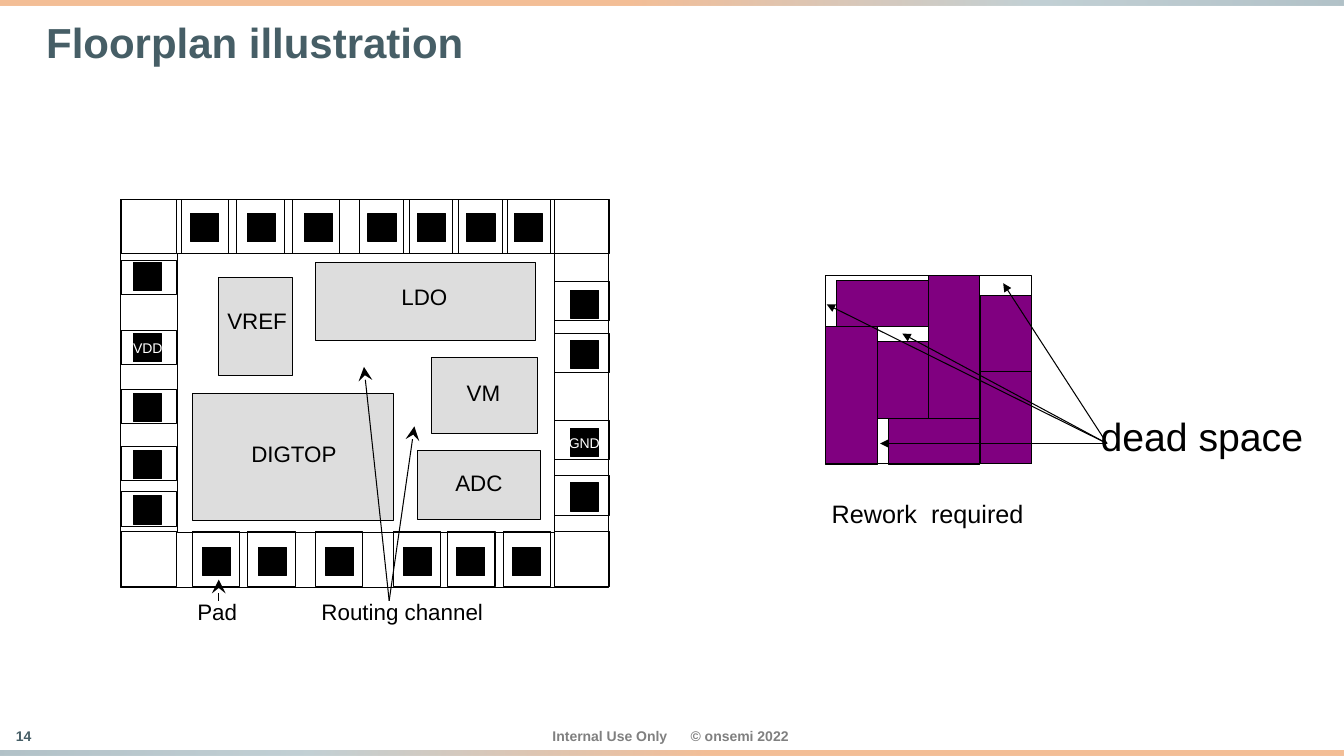
from dataclasses import dataclass

from lxml.etree import SubElement
from pptx import Presentation
from pptx.dml.color import RGBColor
from pptx.enum.shapes import MSO_CONNECTOR, MSO_SHAPE
from pptx.enum.text import MSO_ANCHOR, PP_ALIGN
from pptx.oxml import parse_xml
from pptx.oxml.ns import nsdecls, qn
from pptx.util import Inches, Pt


@dataclass(frozen=True)
class Theme:
    """Colours, type sizes and line width of the slide."""
    font: str = "Arial"
    black: str = "000000"
    white: str = "FFFFFF"
    slate: str = "465E66"
    footer_grey: str = "808080"
    macro_grey: str = "DDDDDD"
    purple: str = "800080"
    band_stops: tuple = ((47, "E97D2E"), (77, "87A3AC"), (100, "648692"))
    title: int = 30
    callout: int = 28
    caption: int = 18
    label: int = 16
    small: int = 10
    line: float = 0.75


class FloorplanSlide:
    """Draws the elements of the floorplan on one slide."""

    def __init__(self, slide, theme):
        self.shapes = slide.shapes
        self.theme = theme

    def rect(self, left, top, width, height, fill=None):
        """Add an outlined rectangle, filled when a colour is given."""
        cell = self.shapes.add_shape(MSO_SHAPE.RECTANGLE, Inches(left), Inches(top),
                                     Inches(width), Inches(height))
        cell.shadow.inherit = False
        if fill:
            cell.fill.solid()
            cell.fill.fore_color.rgb = RGBColor.from_string(fill)
        else:
            cell.fill.background()
        cell.line.color.rgb = RGBColor.from_string(self.theme.black)
        cell.line.width = Pt(self.theme.line)
        return cell

    def band(self, top, angle):
        """Add a full-width gradient strip running at the given angle."""
        strip = self.rect(0, top, 13.33, 0.05)
        strip.line.fill.background()
        stops = "".join(
            f'<a:gs pos="{position * 1000}"><a:srgbClr val="{colour}">'
            f'<a:alpha val="50000"/></a:srgbClr></a:gs>'
            for position, colour in self.theme.band_stops)
        gradient = parse_xml(
            f'<a:gradFill {nsdecls("a")} rotWithShape="1"><a:gsLst>{stops}</a:gsLst>'
            f'<a:lin ang="{angle * 60000}" scaled="0"/></a:gradFill>')
        properties = strip.element.spPr
        properties.replace(properties.find(qn("a:noFill")), gradient)

    def text(self, words, left, top, width, height, size, colour=None, bold=False,
             align=PP_ALIGN.CENTER, inset=True, wrap=True, tab=None, spacing=None):
        """Add a one-paragraph text box."""
        box = self.shapes.add_textbox(Inches(left), Inches(top), Inches(width), Inches(height))
        frame = box.text_frame
        frame.word_wrap = wrap
        frame.vertical_anchor = MSO_ANCHOR.MIDDLE
        if not inset:
            frame.margin_left = frame.margin_right = frame.margin_top = frame.margin_bottom = 0
        paragraph = frame.paragraphs[0]
        paragraph.text = words
        paragraph.alignment = align
        if spacing:
            paragraph.line_spacing = spacing
        if tab:
            tabs = SubElement(paragraph._p.get_or_add_pPr(), qn("a:tabLst"))
            SubElement(tabs, qn("a:tab"), pos=str(Inches(tab)), algn="l")
        paragraph.font.name = self.theme.font
        paragraph.font.size = Pt(size)
        paragraph.font.bold = bold
        paragraph.font.color.rgb = RGBColor.from_string(colour or self.theme.black)

    def arrow(self, start, tip, head="triangle", size="med"):
        """Add a straight arrow from start to tip."""
        pointer = self.shapes.add_connector(
            MSO_CONNECTOR.STRAIGHT, *(Inches(length) for length in (*start, *tip)))
        pointer.line.color.rgb = RGBColor.from_string(self.theme.black)
        pointer.line.width = Pt(self.theme.line)
        SubElement(pointer.line._get_or_add_ln(), qn("a:tailEnd"), type=head, w=size, len=size)
        SubElement(pointer.element.spPr, qn("a:effectLst"))

    def pad(self, left, top):
        """Add a black bond pad."""
        self.rect(left, top, 0.28, 0.28, self.theme.black)


def draw_frame(page):
    """Draw the bands, title and footer."""
    theme = page.theme
    page.text("14", 0.15, 7.22, 0.17, 0.17, theme.small, theme.slate, True,
              inset=False, wrap=False)
    page.text("Internal Use Only\t© onsemi 2022", 5.48, 7.22, 2.37, 0.17, theme.small,
              theme.footer_grey, True, PP_ALIGN.LEFT, inset=False, tab=1.37)
    page.band(7.45, 180)
    page.band(0, 0)
    page.text("Floorplan illustration", 0.36, 0.16, 12.61, 0.56, theme.title, theme.slate,
              True, PP_ALIGN.LEFT, spacing=0.92)


def draw_chip(page):
    """Draw the pad ring, the macros and their labels."""
    theme = page.theme
    page.rect(1.76, 2.52, 3.74, 2.76)
    page.rect(1.2, 1.98, 4.84, 3.85)
    for corner_left in (1.2, 5.5):
        for corner_top, corner_height in ((1.98, 0.54), (5.27, 0.55)):
            page.rect(corner_left, corner_top, 0.55, corner_height)

    top_row = ((1.8, 0.47, 1.89), (2.35, 0.47, 2.45), (2.9, 0.47, 3.02), (3.57, 0.43, 3.65),
               (4.06, 0.43, 4.14), (4.55, 0.43, 4.63), (5.03, 0.43, 5.1))
    for cell_left, cell_width, pad_left in top_row:
        page.rect(cell_left, 1.98, cell_width, 0.54)
        page.pad(pad_left, 2.12)

    bottom_row = ((1.91, 2.01), (2.46, 2.56), (3.13, 3.23), (3.9, 4), (4.44, 4.53), (4.99, 5.08))
    for cell_left, pad_left in bottom_row:
        page.rect(cell_left, 5.27, 0.47, 0.55)
        page.pad(pad_left, 5.43)

    left_column = ((2.58, 2.6), (3.28, 3.31), (3.86, 3.9), (4.43, 4.47), (4.88, 4.92))
    right_column = ((2.79, 2.88), (3.31, 3.38), (4.17, 4.25), (4.72, 4.79))
    for column, cell_left, cell_height, pad_left in ((left_column, 1.2, 0.34, 1.32),
                                                     (right_column, 5.5, 0.39, 5.66)):
        for cell_top, pad_top in column:
            page.rect(cell_left, cell_top, 0.55, cell_height)
            page.pad(pad_left, pad_top)

    for supply, left, top in (("VDD", 1.17, 3.32), ("GND", 5.5, 4.26)):
        page.text(supply, left, top, 0.59, 0.27, theme.small, theme.white)

    macros = (("DIGTOP", (1.91, 3.9, 1.99, 1.26), (1.97, 4.31, 1.89)),
              ("LDO", (3.13, 2.6, 2.18, 0.78), (3.79, 2.76, 0.84)),
              ("VREF", (2.17, 2.75, 0.73, 0.98), (2.14, 3, 0.82)),
              ("ADC", (4.14, 4.47, 1.22, 0.68), (4.34, 4.6, 0.82)),
              ("VM", (4.28, 3.55, 1.05, 0.75), (4.34, 3.71, 0.91)))
    for macro, outline, label_place in macros:
        page.rect(*outline, theme.macro_grey)
        page.text(macro, *label_place, 0.37, theme.label)

    for caption, left, width in (("Pad", 1.64, 1.03), ("Routing channel", 2.86, 2.26)):
        page.text(caption, left, 5.88, width, 0.37, theme.label)
    for start, tip in (((3.86, 5.96), (3.61, 3.64)), ((3.86, 5.96), (4.11, 4.23)),
                       ((2.17, 5.96), (2.17, 5.75))):
        page.arrow(start, tip, "stealth", "lg")


def draw_dead_space(page):
    """Draw the packed blocks and point out the gaps between them."""
    theme = page.theme
    packed_blocks = ((9.72, 2.93, 0.51, 0.77), (9.72, 3.69, 0.51, 0.91), (8.81, 4.15, 0.91, 0.46),
                     (9.21, 2.73, 0.51, 1.42), (8.7, 3.39, 0.51, 0.76), (8.3, 2.78, 0.91, 0.46),
                     (8.19, 3.24, 0.51, 1.37))
    for block in packed_blocks:
        page.rect(*block, theme.purple)
    page.rect(8.19, 2.73, 2.04, 1.87)
    page.text("dead space", 10.8, 4.04, 2.24, 0.57, theme.callout, wrap=False)
    for gap in ((9.95, 2.81), (8.95, 3.31), (8.2, 3.02), (8.73, 4.4)):
        page.arrow((10.98, 4.4), gap)
    page.text("Rework  required", 8.15, 4.89, 2.12, 0.4, theme.caption,
              align=PP_ALIGN.LEFT, wrap=False)


def main():
    """Build and save the slide."""
    deck = Presentation()
    deck.slide_width, deck.slide_height = Inches(13.33), Inches(7.5)
    page = FloorplanSlide(deck.slides.add_slide(deck.slide_layouts[6]), Theme())
    draw_frame(page)
    draw_chip(page)
    draw_dead_space(page)
    deck.save("out.pptx")


if __name__ == "__main__":
    main()
